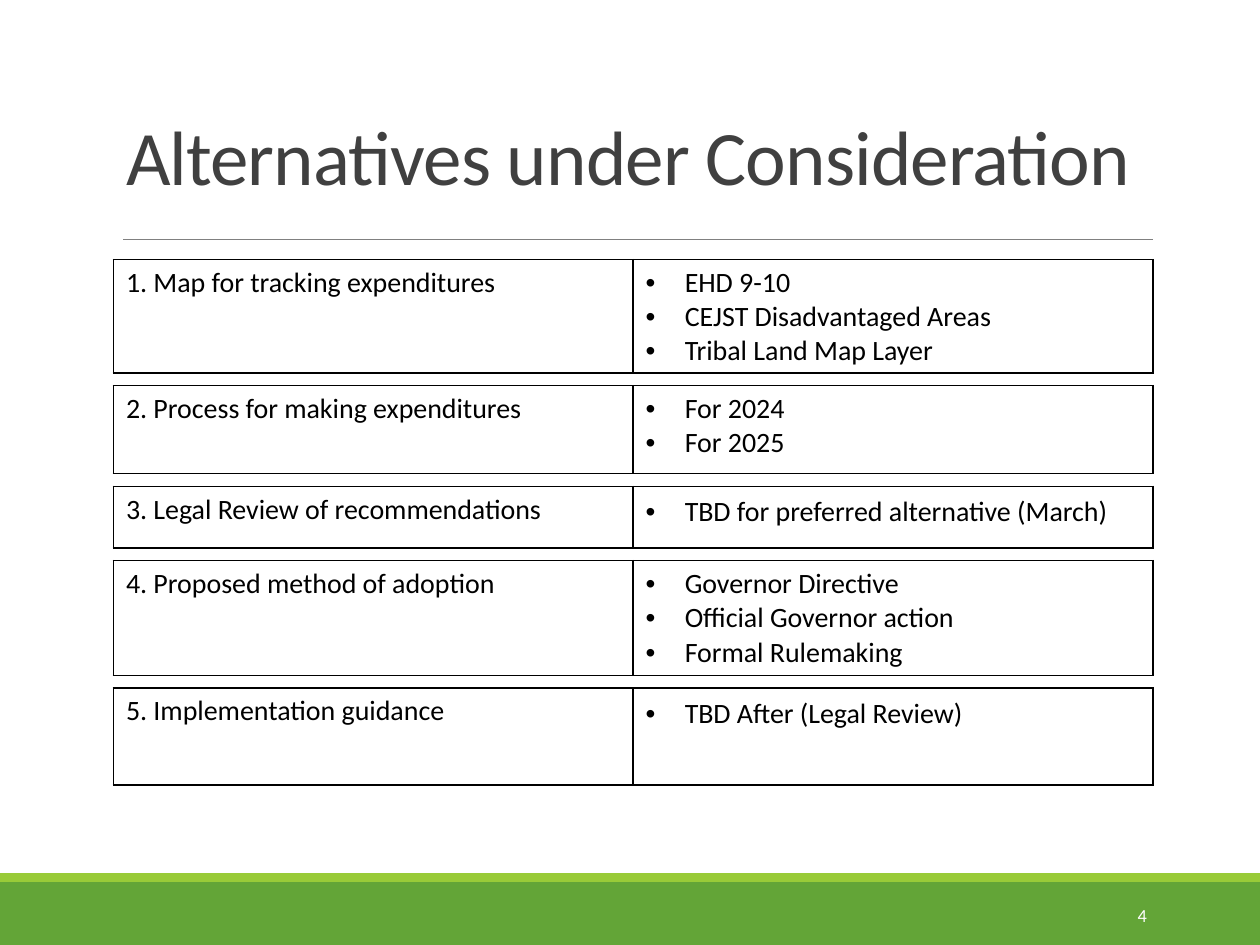
from lxml import etree
from pptx import Presentation
from pptx import util as u
from pptx.dml.color import RGBColor
from pptx.enum import shapes, text
from pptx.oxml.ns import qn

HEADING = "Alternatives under Consideration"
PAGE = "4"
# topic, row height, line spacing, options
ALTERNATIVES = [
    ("1. Map for tracking expenditures", 0.9, 1.0,
     ["EHD 9-10", "CEJST Disadvantaged Areas", "Tribal Land Map Layer"]),
    ("2. Process for making expenditures", 0.7, 1.0, ["For 2024", "For 2025"]),
    ("3. Legal Review of recommendations", 0.49, 1.07,
     ["TBD for preferred alternative (March)"]),
    ("4. Proposed method of adoption", 0.91, 1.0,
     ["Governor Directive", "Official Governor action", "Formal Rulemaking"]),
    ("5. Implementation guidance", 0.77, 1.07, ["TBD After (Legal Review)"]),
]
THEME = {
    "font": "Calibri",
    "heading": (44, "404040"), "body": (16, "000000"), "page": (10.5, "FFFFFF"),
    "band": "63A537", "stripe": "99CB38", "rule": "808080", "border": "000000",
}
LEFT, WIDTH, FIRST_TOP, GAP = 0.9, 8.25, 2.06, 0.1
INDENT = 0.31


def color(name):
    return RGBColor.from_string(name)


def box(left, top, width, height):
    return [u.Inches(v) for v in (left, top, width, height)]


def write(paragraph, words, role):
    run = paragraph.add_run()
    run.text = words
    size, ink = THEME[role]
    for key, value in {"name": THEME["font"], "size": u.Pt(size), "bold": False}.items():
        setattr(run.font, key, value)
    run.font.color.rgb = color(ink)
    return run


def add_bar(slide, top, height, fill):
    bar = slide.shapes.add_shape(shapes.MSO_SHAPE.RECTANGLE, *box(0, top, 10, height))
    bar.shadow.inherit = False
    bar.fill.solid()
    bar.fill.fore_color.rgb = color(fill)
    bar.line.fill.background()


def add_rule(slide):
    x1, y, x2 = (u.Inches(v) for v in (0.98, 1.9, 9.15))
    rule = slide.shapes.add_connector(shapes.MSO_CONNECTOR.STRAIGHT, x1, y, x2, y)
    rule.line.color.rgb = color(THEME["rule"])
    rule.line.width = u.Pt(0.5)
    etree.SubElement(rule._element.spPr, qn("a:effectLst"))


def add_heading(slide):
    heading = slide.shapes.title
    heading.left, heading.top, heading.width, heading.height = box(LEFT, 0.31, WIDTH, 1.34)
    heading.text_frame.vertical_anchor = text.MSO_ANCHOR.BOTTOM
    heading.text_frame.word_wrap = True
    line = heading.text_frame.paragraphs[0]
    line.alignment = text.PP_ALIGN.LEFT
    line.line_spacing = 0.85
    write(line, HEADING, "heading").font._element.set("spc", "-50")


def add_page_number(slide):
    frame = slide.shapes.add_textbox(*box(8.12, 7.06, 1.08, 0.4)).text_frame
    frame.word_wrap = True
    frame.vertical_anchor = text.MSO_ANCHOR.MIDDLE
    frame.paragraphs[0].alignment = text.PP_ALIGN.RIGHT
    write(frame.paragraphs[0], PAGE, "page")


def outline(cell):
    """Draw all four borders and leave the cell unfilled."""
    props = cell._tc.get_or_add_tcPr()
    for side in ("lnL", "lnR", "lnT", "lnB"):
        border = etree.SubElement(props, qn(f"a:{side}"), w=str(u.Pt(1)))
        fill = etree.SubElement(border, qn("a:solidFill"))
        etree.SubElement(fill, qn("a:srgbClr"), val=THEME["border"])
    cell.fill.background()


def bullet(paragraph):
    props = paragraph._p.get_or_add_pPr()
    props.set("marL", str(u.Inches(INDENT)))
    props.set("indent", str(-u.Inches(INDENT)))
    etree.SubElement(props, qn("a:buFont"), typeface="Arial")
    etree.SubElement(props, qn("a:buChar"), char="•")


def add_alternative(slide, top, topic, height, spacing, options):
    table = slide.shapes.add_table(1, 2, *box(LEFT, top, WIDTH, height)).table
    table.first_row = table.horz_banding = False
    topic_cell, options_cell = table.cell(0, 0), table.cell(0, 1)
    for cell in (topic_cell, options_cell):
        outline(cell)
    write(topic_cell.text_frame.paragraphs[0], topic, "body")
    frame = options_cell.text_frame
    for i, option in enumerate(options):
        line = frame.add_paragraph() if i else frame.paragraphs[0]
        line.line_spacing = spacing
        bullet(line)
        write(line, option, "body")


def main():
    deck = Presentation()
    deck.slide_width, deck.slide_height = u.Inches(10), u.Inches(7.5)
    slide = deck.slides.add_slide(deck.slide_layouts[5])
    add_bar(slide, 7, 0.5, THEME["band"])
    add_bar(slide, 6.93, 0.07, THEME["stripe"])
    add_rule(slide)
    add_heading(slide)
    add_page_number(slide)
    top = FIRST_TOP
    for topic, height, spacing, options in ALTERNATIVES:
        add_alternative(slide, top, topic, height, spacing, options)
        top += height + GAP
    deck.save("out.pptx")


if __name__ == "__main__":
    main()
